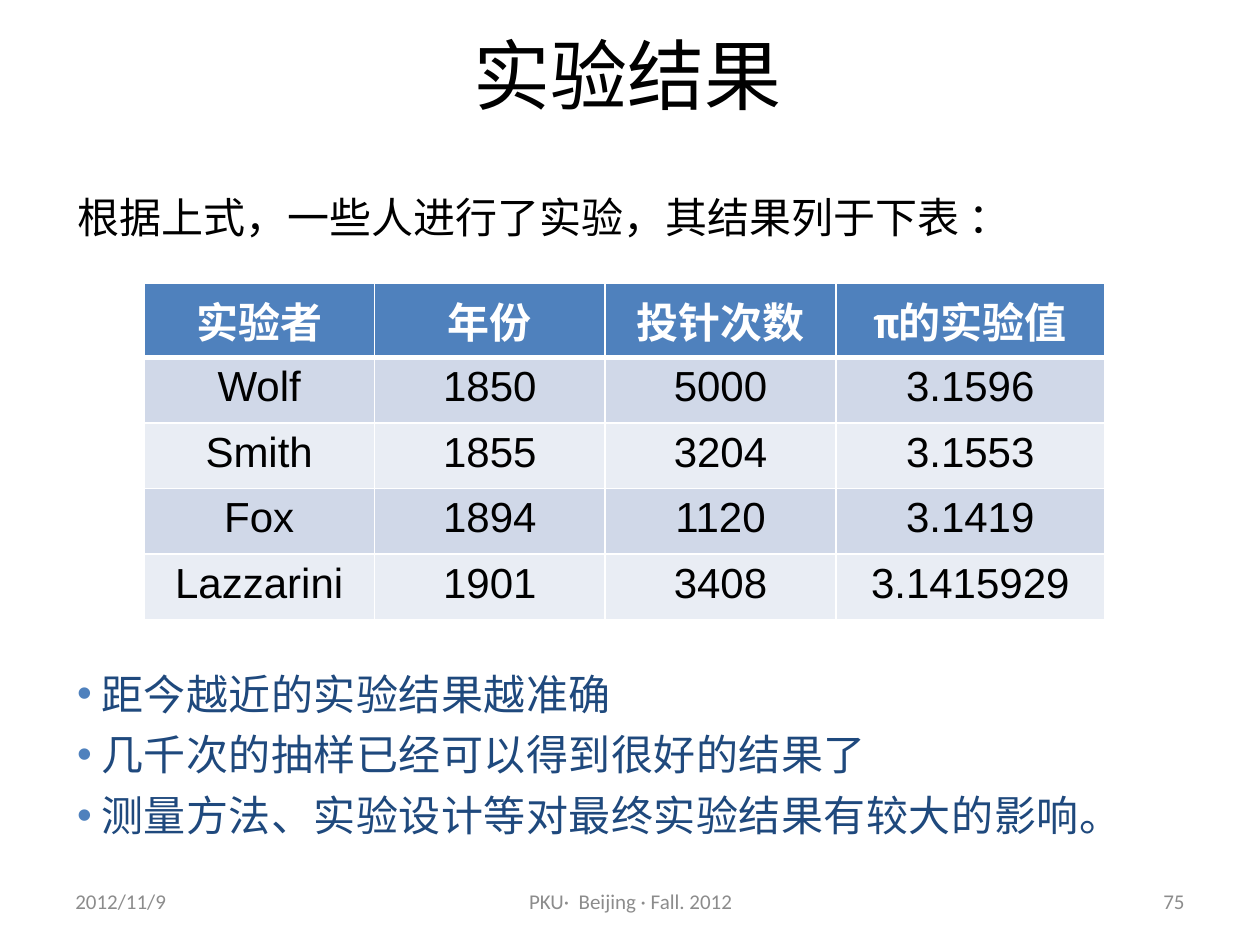
from lxml import etree
from pptx import Presentation
from pptx import util as u
from pptx.dml.color import RGBColor
from pptx.enum import text as tx
from pptx.oxml.ns import qn

# Content
TITLE = "实验结果"
INTRO = "根据上式，一些人进行了实验，其结果列于下表 ："
HEAD = ["实验者", "年份", "投针次数", ("π", "的实验值")]
ROWS = [
    ("Wolf", "1850", "5000", "3.1596"),
    ("Smith", "1855", "3204", "3.1553"),
    ("Fox", "1894", "1120", "3.1419"),
    ("Lazzarini", "1901", "3408", "3.1415929"),
]
POINTS = [
    "距今越近的实验结果越准确",
    "几千次的抽样已经可以得到很好的结果了",
    "测量方法、实验设计等对最终实验结果有较大的影响。",
]
LEFT, MID, RIGHT = tx.PP_ALIGN.LEFT, tx.PP_ALIGN.CENTER, tx.PP_ALIGN.RIGHT
FOOT = [  # text, left, width, alignment
    ("2012/11/9", 1.27, 5.92, LEFT),
    ("PKU·  Beijing · Fall. 2012", 8.69, 8.05, MID),
    ("75", 18.21, 5.92, RIGHT),
]

# Theme
THEME = {
    "ink": "000000", "white": "FFFFFF", "blue": "4F81BD", "navy": "1F497D",
    "gray": "8C8C8C", "bands": ("D0D8E8", "E9EDF4"),
    "big": 44, "text": 24, "small": 12,
    "sans": "Calibri", "grid": "Arial", "han": "Noto Sans CJK SC",
    "mono": "Noto Sans Mono",
}
T = THEME


def put(frame, lines, size=T["text"], font=T["han"], color=T["ink"], bold=False,
        align=LEFT, before=0, hang=0, dot=None, track=0):
    """Fill a text frame; a line is a string or a list of (text, font) runs."""
    for i, line in enumerate(lines):
        par = frame.paragraphs[0] if i == 0 else frame.add_paragraph()
        par.alignment = align
        par.space_before = u.Pt(before)
        prop = par._p.get_or_add_pPr()
        prop.set("marL", str(u.Cm(hang)))
        prop.set("indent", str(-u.Cm(hang)))
        if dot:
            tint = etree.SubElement(prop, qn("a:buClr"))
            etree.SubElement(tint, qn("a:srgbClr"), val=dot)
            etree.SubElement(prop, qn("a:buFont"), typeface=T["grid"])
            etree.SubElement(prop, qn("a:buChar"), char="•")
        else:
            etree.SubElement(prop, qn("a:buNone"))
        for words, face in [(line, font)] if isinstance(line, str) else line:
            run = par.add_run()
            run.text = words
            run.font.size, run.font.bold = u.Pt(size), bold
            run.font.name = face
            run.font.color.rgb = RGBColor.from_string(color)
            look = run._r.get_or_add_rPr()
            etree.SubElement(look, qn("a:ea"), typeface=T["han"])
            if track:
                look.set("spc", str(track))


def place(shape, x, y, w, h, anchor=tx.MSO_ANCHOR.TOP):
    shape.left, shape.top = u.Cm(x), u.Cm(y)
    shape.width, shape.height = u.Cm(w), u.Cm(h)
    frame = shape.text_frame
    frame.word_wrap = True
    frame.auto_size = tx.MSO_AUTO_SIZE.NONE
    frame.vertical_anchor = anchor
    return frame


def edge(cell, base):
    """Draw white cell borders, with the bottom one base points wide."""
    prop = cell._tc.get_or_add_tcPr()
    for i, (side, wide) in enumerate(zip("LRTB", (1, 1, 1, base))):
        line = etree.Element(qn("a:ln" + side), w=str(u.Pt(wide)))
        fill = etree.SubElement(line, qn("a:solidFill"))
        etree.SubElement(fill, qn("a:srgbClr"), val=T["white"])
        prop.insert(i, line)


deck = Presentation()
deck.slide_width, deck.slide_height = u.Cm(25.4), u.Cm(19.05)
slide = deck.slides.add_slide(deck.slide_layouts[3])
title, intro, notes = slide.placeholders

# Title, introduction and conclusions
put(place(title, 0.71, 0, 23.88, 2.97, tx.MSO_ANCHOR.MIDDLE), [TITLE],
    size=T["big"], font=T["sans"], align=MID)
put(place(intro, 1.3, 3.73, 22.86, 1.4), [INTRO], before=4.8, hang=0.95)
put(place(notes, 1.3, 13.34, 22.86, 4.6), POINTS, color=T["navy"],
    before=6, hang=0.49, dot=T["blue"], track=30)

# Results table
wides, high = (4.65, 4.65, 4.65, 5.42), 1.32
data = [HEAD] + ROWS
table = slide.shapes.add_table(len(data), len(wides), u.Cm(2.9), u.Cm(5.72),
                               u.Cm(sum(wides)), u.Cm(high * len(data))).table
for col, wide in zip(table.columns, wides):
    col.width = u.Cm(wide)
for r, row in enumerate(data):
    table.rows[r].height = u.Cm(high)
    top = r == 0
    for c, item in enumerate(row):
        cell = table.cell(r, c)
        cell.fill.solid()
        shade = T["blue"] if top else T["bands"][(r - 1) % 2]
        cell.fill.fore_color.rgb = RGBColor.from_string(shade)
        edge(cell, 3 if top else 1)
        line = item if isinstance(item, str) else list(zip(item, (T["mono"], T["grid"])))
        put(cell.text_frame, [line], font=T["grid"], bold=top, align=MID,
            color=T["white"] if top else T["ink"])

# Footer
for words, x, wide, align in FOOT:
    box = slide.shapes.add_textbox(0, 0, 0, 0)
    put(place(box, x, 17.65, wide, 1.02, tx.MSO_ANCHOR.MIDDLE), [words],
        size=T["small"], font=T["sans"], color=T["gray"], align=align)

deck.save("out.pptx")
